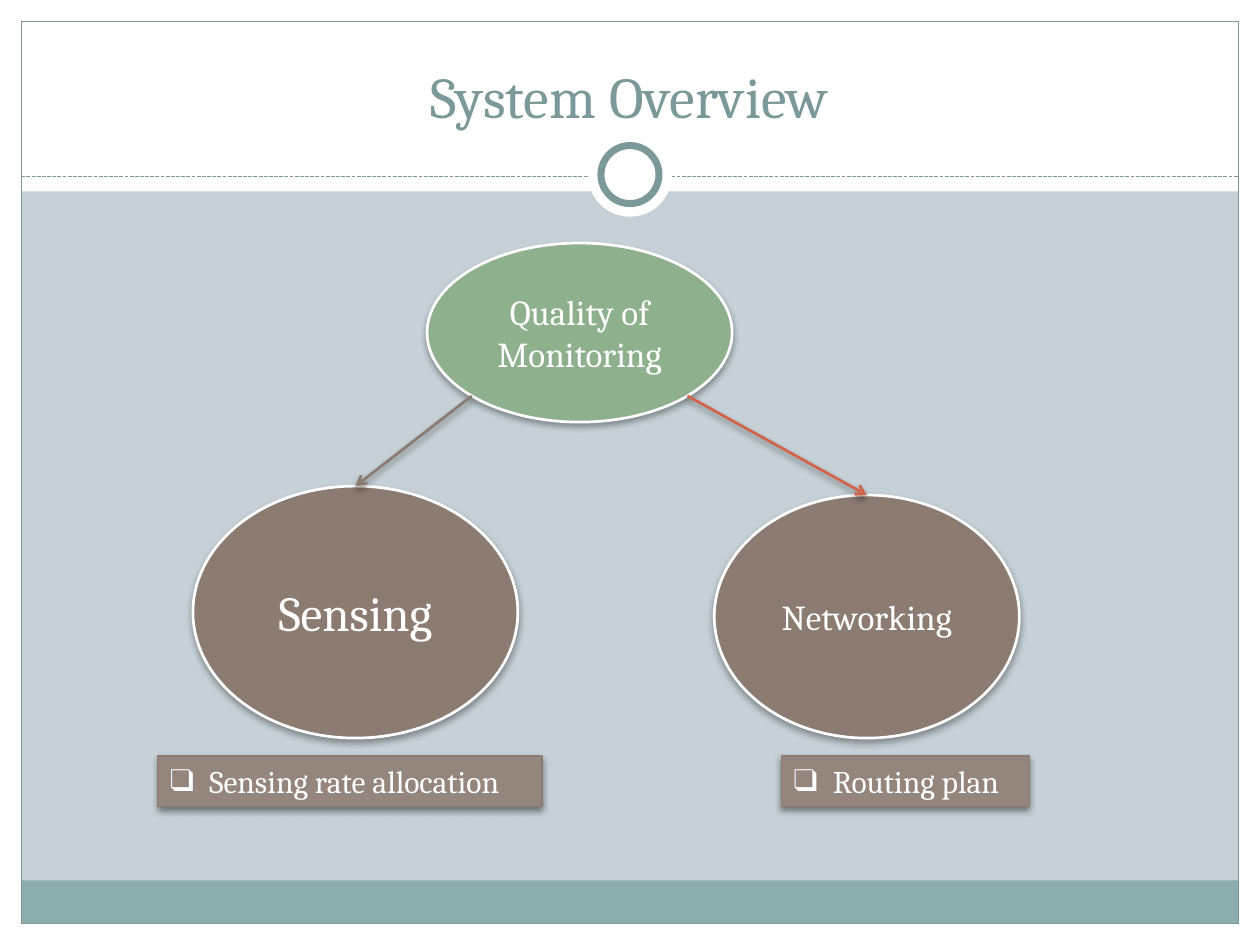
"""Build the System Overview slide: monitoring quality split into sensing and networking."""
from math import sqrt

from lxml.etree import SubElement
from pptx import Presentation
from pptx.dml.color import RGBColor
from pptx.enum.dml import MSO_LINE
from pptx.enum.shapes import MSO_CONNECTOR, MSO_SHAPE as Form
from pptx.enum.text import MSO_ANCHOR as Anchor, PP_ALIGN as Align
from pptx.oxml.ns import qn
from pptx.util import Cm, Pt

WIDTH, HEIGHT, MARGIN = 25.4, 19.05, 0.43
INNER_WIDTH, INNER_HEIGHT = WIDTH - 2 * MARGIN, HEIGHT - 2 * MARGIN
FONT = "Cambria"
WHITE, TEAL, BROWN, RED = "FFFFFF", "7C999A", "8C7B70", "D16349"
BACKGROUND, FOOTER, GREEN, LABEL = "C5D1D7", "8CADAE", "8FB08C", "95867D"

HEADER_HEIGHT, FOOTER_HEIGHT, RULE_Y = 3.86, 0.87, 3.56
RING_Y = 3.52
RINGS = [(1.7, None, 0), (1.17, TEAL, 4)]
TITLE = ("System Overview", (0.84, 0.64, 23.7, 2.11), 33)
GOAL = ("Quality of Monitoring", (8.61, 4.9, 6.15, 3.61), GREEN, 20)
PARTS = [
    (("Sensing", (3.89, 9.8, 6.55, 5.08), BROWN, 28), -1, BROWN),
    (("Networking", (14.4, 9.98, 6.15, 4.9), BROWN, 20), 1, RED),
]
TASKS = [
    ("Sensing rate allocation", (3.18, 15.24, 7.75, 1.02)),
    ("Routing plan", (15.75, 15.24, 5, 1.02)),
]


def color(value):
    return RGBColor.from_string(value)


def add_form(page, form, place, fill=None, line=None, weight=0.75):
    shape = page.shapes.add_shape(form, *map(Cm, place))
    shape.shadow.inherit = False
    if fill:
        shape.fill.solid()
        shape.fill.fore_color.rgb = color(fill)
    else:
        shape.fill.background()
    if line:
        shape.line.color.rgb = color(line)
        shape.line.width = Pt(weight)
    else:
        shape.line.fill.background()
    return shape


def add_line(page, start, end, line, weight):
    connector = page.shapes.add_connector(MSO_CONNECTOR.STRAIGHT, *map(Cm, start + end))
    connector.line.color.rgb = color(line)
    connector.line.width = Pt(weight)
    SubElement(connector._element.spPr, qn("a:effectLst"))
    return connector


def cast_shadow(shape, opacity):
    effects = shape._element.spPr.find(qn("a:effectLst"))
    shadow = SubElement(effects, qn("a:outerShdw"), blurRad=str(Pt(4)), dist=str(Pt(2)),
                        dir="5400000", rotWithShape="0")
    black = SubElement(shadow, qn("a:srgbClr"), val="000000")
    SubElement(black, qn("a:alpha"), val=str(opacity * 1000))


def write(shape, text, size, ink, align, anchor):
    frame = shape.text_frame
    frame.word_wrap = True
    frame.vertical_anchor = anchor
    para = frame.paragraphs[0]
    para.alignment = align
    span = para.add_run()
    span.text = text
    span.font.name = FONT
    span.font.size = Pt(size)
    span.font.color.rgb = color(ink)
    return para


def add_bullet(para, mark):
    settings = para._p.get_or_add_pPr()
    settings.set("marL", str(Cm(0.79)))
    settings.set("indent", str(-Cm(0.79)))
    SubElement(settings, qn("a:buFont"), typeface=FONT)
    SubElement(settings, qn("a:buChar"), char=mark)


def add_oval(page, text, place, fill, size):
    oval = add_form(page, Form.OVAL, place, fill, WHITE, 1.57)
    cast_shadow(oval, 35)
    write(oval, text, size, WHITE, Align.CENTER, Anchor.MIDDLE)
    return oval


def add_arrow(page, side, target, line):
    left, top, width, height = GOAL[1]
    reach = sqrt(0.5) / 2
    start = (left + width * (0.5 + side * reach), top + height * (0.5 + reach))
    arrow = add_line(page, start, start, line, 1.57)
    arrow.end_connect(target, 0)
    SubElement(arrow.line._get_or_add_ln(), qn("a:tailEnd"), type="arrow")
    cast_shadow(arrow, 45)


def add_frame(page):
    page.background.fill.solid()
    page.background.fill.fore_color.rgb = color(BACKGROUND)
    bottom, right = HEIGHT - MARGIN, WIDTH - MARGIN
    for place, fill in [
        ((0, bottom, WIDTH, MARGIN), WHITE),
        ((0, 0, WIDTH, HEADER_HEIGHT), WHITE),
        ((0, 0, MARGIN, HEIGHT), WHITE),
        ((right, 0, MARGIN, HEIGHT), WHITE),
        ((MARGIN, bottom - FOOTER_HEIGHT, INNER_WIDTH, FOOTER_HEIGHT), FOOTER),
    ]:
        add_form(page, Form.RECTANGLE, place, fill)
    add_form(page, Form.RECTANGLE, (MARGIN, MARGIN, INNER_WIDTH, INNER_HEIGHT), line=TEAL)
    rule = add_line(page, (MARGIN, RULE_Y), (right, RULE_Y), TEAL, 0.75)
    rule.line.dash_style = MSO_LINE.SQUARE_DOT
    for size, line, weight in RINGS:
        place = ((WIDTH - size) / 2, RING_Y - size / 2, size, size)
        add_form(page, Form.OVAL, place, WHITE, line, weight)


def main():
    deck = Presentation()
    deck.slide_width, deck.slide_height = Cm(WIDTH), Cm(HEIGHT)
    page = deck.slides.add_slide(deck.slide_layouts[6])
    add_frame(page)

    text, place, size = TITLE
    box = page.shapes.add_textbox(*map(Cm, place))
    write(box, text, size, TEAL, Align.CENTER, Anchor.BOTTOM)

    add_oval(page, *GOAL)
    ovals = [add_oval(page, *part) for part, _, _ in PARTS]
    for oval, (_, side, line) in zip(ovals, PARTS):
        add_arrow(page, side, oval, line)

    for text, place in TASKS:
        label = add_form(page, Form.RECTANGLE, place, LABEL, BROWN)
        cast_shadow(label, 45)
        add_bullet(write(label, text, 18, WHITE, Align.LEFT, Anchor.TOP), "❑")

    deck.save("out.pptx")


if __name__ == "__main__":
    main()
